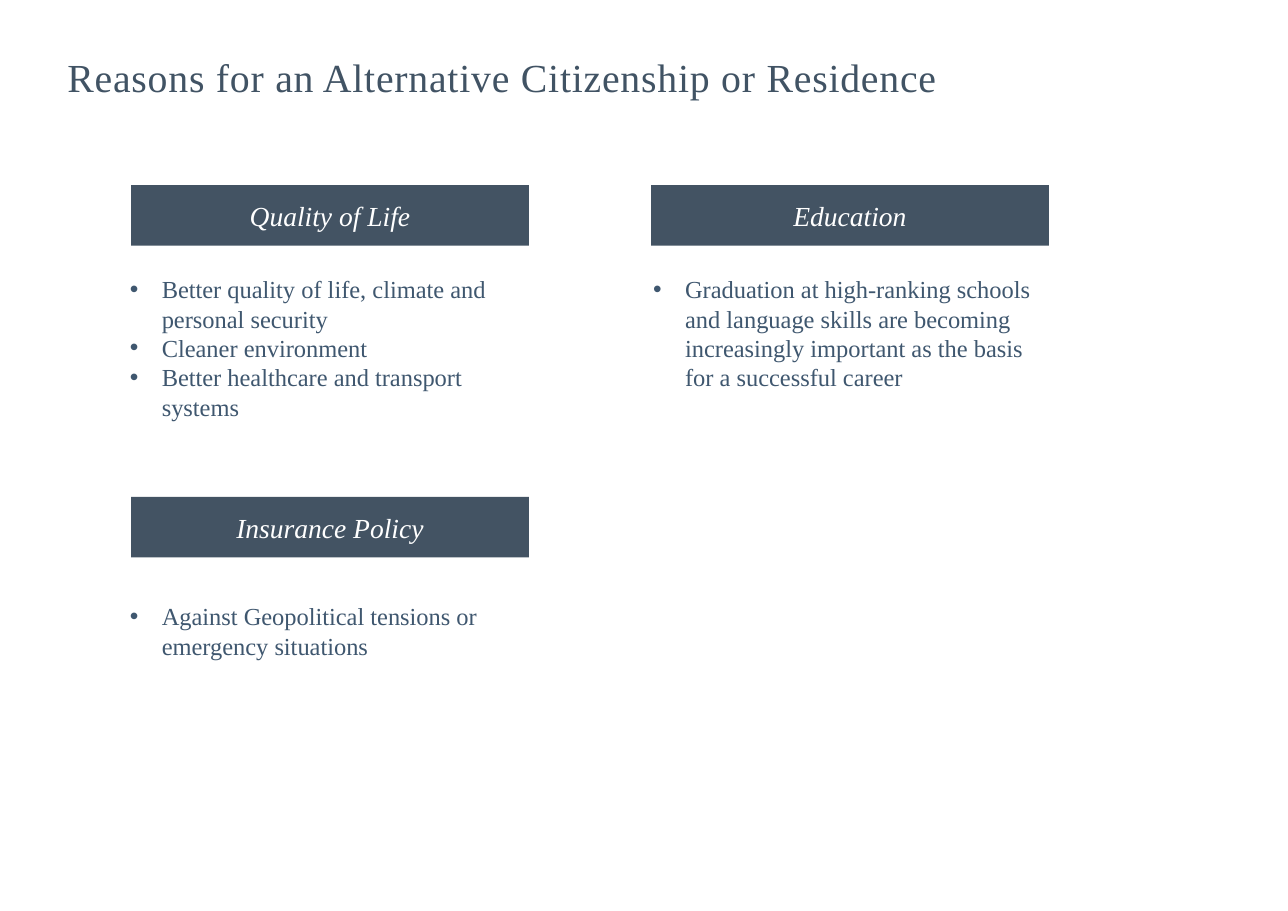
from dataclasses import dataclass

from lxml import etree
from pptx import Presentation
from pptx.dml.color import RGBColor
from pptx.enum.shapes import MSO_SHAPE
from pptx.enum.text import MSO_ANCHOR, PP_ALIGN
from pptx.oxml.ns import qn
from pptx.util import Inches, Pt

RECTANGLE = MSO_SHAPE.RECTANGLE
MIDDLE = MSO_ANCHOR.MIDDLE
CENTER = PP_ALIGN.CENTER
LEFT = PP_ALIGN.LEFT


@dataclass(frozen=True)
class Theme:
    font: str = "Times New Roman"
    title_color: str = "415364"
    header_fill: str = "435363"
    header_color: str = "FFFFFF"
    body_color: str = "3F576F"
    title_size: int = 26
    header_size: int = 18
    body_size: int = 16


class PageBuilder:
    """Holds the theme and the current page."""

    def __init__(self, page, theme):
        self.page = page
        self.theme = theme

    def format_para(self, para, size, color, align, italic=False):
        para.alignment = align
        for span in para.runs:
            span.font.name = self.theme.font
            span.font.size = Pt(size)
            span.font.italic = italic
            span.font.color.rgb = RGBColor.from_string(color)

    def text_box(self, left, top, width, height, text):
        box = self.page.shapes.add_textbox(
            Inches(left), Inches(top), Inches(width), Inches(height))
        box.text_frame.word_wrap = True
        box.text_frame.text = text
        return box.text_frame

    def title(self, left, top, width, height, text):
        para = self.text_box(left, top, width, height, text).paragraphs[0]
        self.format_para(para, self.theme.title_size, self.theme.title_color, CENTER)
        # Letter spacing in hundredths of a point
        para.runs[0]._r.get_or_add_rPr().set("spc", "50")

    def header(self, left, top, width, height, text):
        bar = self.page.shapes.add_shape(
            RECTANGLE, Inches(left), Inches(top), Inches(width), Inches(height))
        bar.shadow.inherit = False
        bar.fill.solid()
        bar.fill.fore_color.rgb = RGBColor.from_string(self.theme.header_fill)
        bar.line.fill.background()
        bar.text_frame.text = text
        bar.text_frame.vertical_anchor = MIDDLE
        self.format_para(bar.text_frame.paragraphs[0], self.theme.header_size,
                         self.theme.header_color, CENTER, italic=True)

    def bullets(self, left, top, width, height, items):
        frame = self.text_box(left, top, width, height, "\n".join(items))
        for para in frame.paragraphs:
            self.format_para(para, self.theme.body_size, self.theme.body_color, LEFT)
            # Hanging indent and bullet
            properties = para._p.get_or_add_pPr()
            properties.set("marL", str(Inches(0.29)))
            properties.set("indent", str(Inches(-0.29)))
            etree.SubElement(properties, qn("a:buFont"), typeface="Arial")
            etree.SubElement(properties, qn("a:buChar"), char="•")


# Header, header left and top, list left, top and height, list items
REASONS = [
    ("Quality of Life", 1.19, 1.68, 1.08, 2.44, 1.45, [
        "Better quality of life, climate and personal security",
        "Cleaner environment",
        "Better healthcare and transport systems",
    ]),
    ("Education", 5.91, 1.68, 5.83, 2.44, 1.18, [
        "Graduation at high-ranking schools and language skills are becoming "
        "increasingly important as the basis for a successful career",
    ]),
    ("Insurance Policy", 1.19, 4.51, 1.08, 5.41, 0.64, [
        "Against Geopolitical tensions or emergency situations",
    ]),
]


def main():
    deck = Presentation()
    deck.slide_width = Inches(11.69)
    deck.slide_height = Inches(8.27)
    blank_layout = deck.slide_layouts[6]
    builder = PageBuilder(deck.slides.add_slide(blank_layout), Theme())

    # Title
    builder.title(0.4, 0.43, 8.33, 0.54,
                  "Reasons for an Alternative Citizenship or Residence")

    # Reasons: a header bar with a bulleted list below
    for name, bar_left, bar_top, list_left, list_top, list_height, items in REASONS:
        builder.header(bar_left, bar_top, 3.61, 0.55, name)
        builder.bullets(list_left, list_top, 3.85, list_height, items)

    deck.save("out.pptx")


if __name__ == "__main__":
    main()
